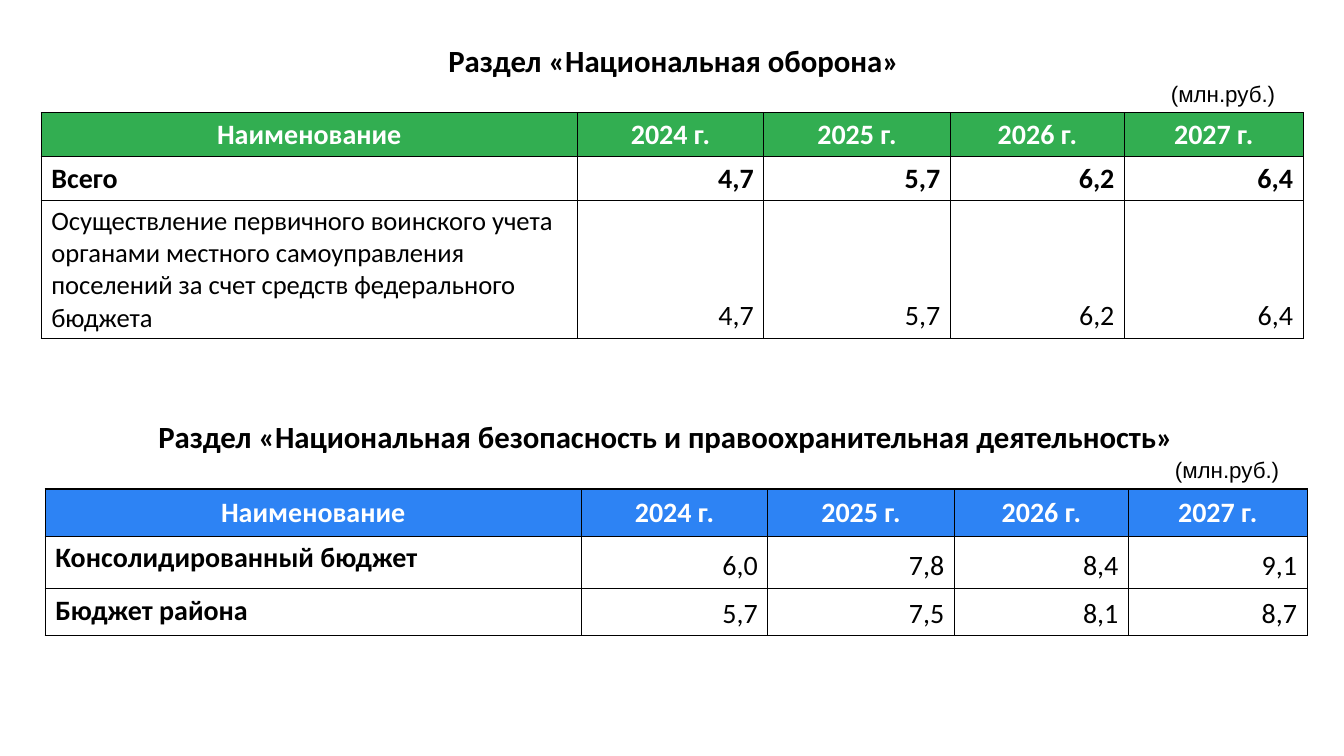
import dataclasses

import lxml.etree
import pptx
import pptx.dml.color
import pptx.enum.text
import pptx.oxml.ns
import pptx.slide
import pptx.table
import pptx.text.text
import pptx.util

Cm = pptx.util.Cm
ALIGN = pptx.enum.text.PP_ALIGN
ANCHOR = pptx.enum.text.MSO_ANCHOR

COLORS = {
    "text": "000000",
    "header_text": "FFFFFF",
    "border": "000000",
    "defence": "32AE51",
    "security": "2D83F4",
}
HEADERS = ("Наименование", "2024 г.", "2025 г.", "2026 г.", "2027 г.")
COL_WIDTHS = (13.51, 4.7, 4.7, 4.39, 4.5)


@dataclasses.dataclass
class BudgetRow:
    name: str
    values: tuple[str, ...]
    height: float
    name_size: int = 20
    name_bold: bool = True
    values_bold: bool = False


@dataclasses.dataclass
class Section:
    title: str
    title_left: float
    title_width: float
    left: float
    top: float
    color: str
    header_height: float
    rows: list[BudgetRow]


SECTIONS = [
    Section("Раздел «Национальная оборона»", 8.23, 17.5, 1.04, 2.84, "defence", 1.09, [
        BudgetRow("Всего", ("4,7", "5,7", "6,2", "6,4"), 1.09, values_bold=True),
        BudgetRow(
            "Осуществление первичного воинского учета органами местного "
            "самоуправления поселений за счет средств федерального бюджета",
            ("4,7", "5,7", "6,2", "6,4"), 3.48, name_size=19, name_bold=False),
    ]),
    Section("Раздел «Национальная безопасность и правоохранительная деятельность»",
            3.33, 26.9, 1.14, 12.32, "security", 1.19, [
        BudgetRow("Консолидированный бюджет", ("6,0", "7,8", "8,4", "9,1"), 1.32),
        BudgetRow("Бюджет района", ("5,7", "7,5", "8,1", "8,7"), 1.19),
    ]),
]


def write_text(tf: pptx.text.text.TextFrame, text: str, *, size: int = 20,
               font: str = "Calibri", color: str = "text", bold: bool = False,
               align: ALIGN = ALIGN.CENTER) -> None:
    p = tf.paragraphs[0]
    p.alignment = align
    r = p.add_run()
    r.text = text
    r.font.size = pptx.util.Pt(size)
    r.font.name = font
    r.font.bold = bold
    r.font.color.rgb = pptx.dml.color.RGBColor.from_string(COLORS[color])


def add_label(s: pptx.slide.Slide, left: float, top: float, width: float,
              height: float, inset_top: float) -> pptx.text.text.TextFrame:
    tf = s.shapes.add_textbox(Cm(left), Cm(top), Cm(width), Cm(height)).text_frame
    tf.word_wrap = True
    tf.auto_size = pptx.enum.text.MSO_AUTO_SIZE.SHAPE_TO_FIT_TEXT
    tf.margin_top = Cm(inset_top)
    return tf


def add_borders(cell: pptx.table._Cell) -> None:
    qn = pptx.oxml.ns.qn
    props = cell._tc.get_or_add_tcPr()
    for side in ("lnL", "lnR", "lnT", "lnB"):
        ln = lxml.etree.SubElement(props, qn(f"a:{side}"), w=str(pptx.util.Pt(1)))
        fill = lxml.etree.SubElement(ln, qn("a:solidFill"))
        lxml.etree.SubElement(fill, qn("a:srgbClr"), val=COLORS["border"])


def fill_header(table: pptx.table.Table, color: str) -> None:
    for cell, header in zip(table.rows[0].cells, HEADERS):
        cell.fill.solid()
        cell.fill.fore_color.rgb = pptx.dml.color.RGBColor.from_string(COLORS[color])
        cell.vertical_anchor = ANCHOR.MIDDLE
        write_text(cell.text_frame, header, color="header_text", bold=True)


def fill_row(cells: list[pptx.table._Cell], row: BudgetRow) -> None:
    write_text(cells[0].text_frame, row.name, size=row.name_size,
               bold=row.name_bold, align=ALIGN.LEFT)
    for cell, value in zip(cells[1:], row.values):
        cell.vertical_anchor = ANCHOR.BOTTOM
        write_text(cell.text_frame, value, bold=row.values_bold, align=ALIGN.RIGHT)


def add_budget_table(s: pptx.slide.Slide, section: Section) -> None:
    heights = [section.header_height] + [row.height for row in section.rows]
    table = s.shapes.add_table(
        len(heights), len(COL_WIDTHS), Cm(section.left), Cm(section.top),
        Cm(sum(COL_WIDTHS)), Cm(sum(heights))).table
    table.first_row = False
    table.horz_banding = False
    for column, width in zip(table.columns, COL_WIDTHS):
        column.width = Cm(width)
    for table_row, height in zip(table.rows, heights):
        table_row.height = Cm(height)
    for cell in table.iter_cells():
        add_borders(cell)
        cell.fill.background()
    fill_header(table, section.color)
    for i, row in enumerate(section.rows, start=1):
        fill_row(list(table.rows[i].cells), row)


def add_section(s: pptx.slide.Slide, section: Section) -> None:
    title = add_label(s, section.title_left, section.top - 2.13,
                      section.title_width, 1.4, 0.34)
    write_text(title, section.title, size=22, bold=True)
    unit = add_label(s, section.left + 27.46, section.top - 0.96, 4.65, 0.94, 0.13)
    write_text(unit, "(млн.руб.)", size=16, font="Arial")
    add_budget_table(s, section)


def main() -> None:
    prs = pptx.Presentation()
    prs.slide_width = Cm(33.87)
    prs.slide_height = Cm(19.05)
    s = prs.slides.add_slide(prs.slide_layouts[6])
    for section in SECTIONS:
        add_section(s, section)
    prs.save("out.pptx")


if __name__ == "__main__":
    main()
